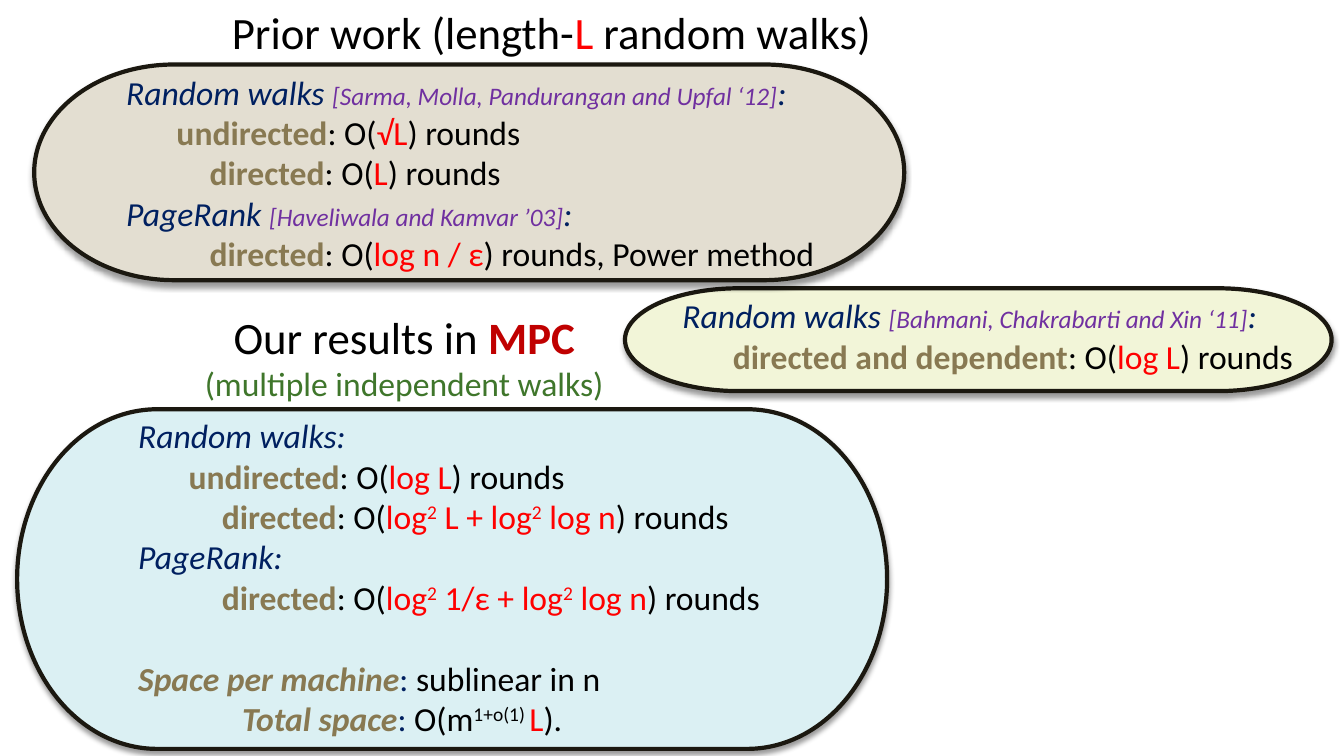
"""Build a slide comparing prior random-walk bounds with new MPC results."""
from lxml import etree
from pptx import Presentation
from pptx.dml.color import RGBColor
from pptx.enum.shapes import MSO_SHAPE
from pptx.enum.text import MSO_ANCHOR, MSO_AUTO_SIZE, PP_ALIGN
from pptx.oxml import parse_xml
from pptx.oxml.ns import qn
from pptx.util import Inches, Pt

TERMINATOR = MSO_SHAPE.FLOWCHART_TERMINATOR
TOP, NO_FIT = MSO_ANCHOR.TOP, MSO_AUTO_SIZE.NONE
LEFT, CENTER = PP_ALIGN.LEFT, PP_ALIGN.CENTER
DRAWING_NS = "http://schemas.openxmlformats.org/drawingml/2006/main"

COLORS = {
    "black": "000000", "red": "FF0000", "navy": "002060", "purple": "7030A0",
    "olive": "887952", "crimson": "C00000", "green": "3F762B", "outline": "1B1810",
    "sand": "E3DED1", "aqua": "DBF0F3", "lime": "F2F5D8",
}
STYLES = {
    "plain": ("black", {}),
    "power": ("black", {"baseline": 30000}),
    "bound": ("red", {}),
    "bound power": ("red", {"baseline": 30000}),
    "topic": ("navy", {"italic": True}),
    "colon": ("navy", {}),
    "citation": ("purple", {"italic": True, "size": Pt(18)}),
    "case": ("olive", {"bold": True}),
    "measure": ("olive", {"bold": True, "italic": True}),
    "heading": ("black", {"size": Pt(32)}),
    "heading bound": ("red", {"size": Pt(32)}),
    "model": ("crimson", {"size": Pt(32), "bold": True}),
    "remark": ("green", {}),
}
UNDIRECTED, DIRECTED, TOTAL = 3.75, 6.22, 7.73
LINE_GAP = 29


def topic(name, citation=None):
    if citation is None:
        return 0, 0, [("topic", f"{name}:")]
    return 0, 0, [("topic", f"{name} "), ("citation", citation), ("topic", ":")]


def case(name, indent, *bound, ending=") rounds"):
    return indent, 0, [("case", name), ("plain", ": O("), *bound, ("plain", ending)]


def squared_logs(argument):
    return [("bound", "log"), ("bound power", "2"), ("bound", f" {argument} + log"),
            ("bound power", "2"), ("bound", " log n")]


class ResultsSlide:
    """Hold the style and the slide; lengths are percentages of its size."""

    def __init__(self, deck):
        self.width, self.height = deck.slide_width, deck.slide_height
        self.slide = deck.slides.add_slide(deck.slide_layouts[4])
        self.font = "Calibri"
        self.size = Pt(24)

    def across(self, share):
        return int(self.width * share / 100)

    def down(self, share):
        return int(self.height * share / 100)

    def box(self, left, top, width, height):
        return self.across(left), self.down(top), self.across(width), self.down(height)

    def panel(self, place, color):
        panel = self.slide.shapes.add_shape(TERMINATOR, *self.box(*place))
        panel.fill.solid()
        panel.fill.fore_color.rgb = RGBColor.from_string(COLORS[color])
        panel.line.color.rgb = RGBColor.from_string(COLORS["outline"])
        panel.line.width = Pt(3)
        panel.shadow.inherit = False
        effects = panel.element.spPr.find(qn("a:effectLst"))
        effects.append(parse_xml(
            f'<a:outerShdw xmlns:a="{DRAWING_NS}" blurRad="{Pt(4)}" dist="{Pt(3)}" '
            'dir="5400000" rotWithShape="0"><a:srgbClr val="000000">'
            '<a:alpha val="40000"/></a:srgbClr></a:outerShdw>'))
        panel.element.getparent().insert(2, panel.element)

    def text(self, index, place, lines, align=LEFT):
        holder = self.slide.placeholders[index]
        holder.left, holder.top, holder.width, holder.height = self.box(*place)
        frame = holder.text_frame
        layout = {"word_wrap": True, "auto_size": NO_FIT, "vertical_anchor": TOP,
                  "margin_left": Inches(0.1), "margin_right": Inches(0.1),
                  "margin_top": Inches(0.05), "margin_bottom": Inches(0.05)}
        for name, value in layout.items():
            setattr(frame, name, value)
        for number, (indent, gap, pieces) in enumerate(lines):
            line = frame.add_paragraph() if number else frame.paragraphs[0]
            properties = line._p.get_or_add_pPr()
            properties.set("marL", str(self.across(indent)))
            properties.set("indent", "0")
            etree.SubElement(properties, qn("a:buNone"))
            spacing = {"alignment": align, "line_spacing": 1.0,
                       "space_before": Pt(gap), "space_after": Pt(0)}
            for name, value in spacing.items():
                setattr(line, name, value)
            for style, words in pieces:
                self.run(line, style, words)

    def run(self, line, style, words):
        color, changes = STYLES[style]
        run = line.add_run()
        run.text = words
        formats = {"name": self.font, "size": self.size, "bold": False,
                   "italic": False, **changes}
        baseline = formats.pop("baseline", None)
        for name, value in formats.items():
            setattr(run.font, name, value)
        run.font.color.rgb = RGBColor.from_string(COLORS[color])
        if baseline:
            run._r.get_or_add_rPr().set("baseline", str(baseline))


def main():
    deck = Presentation()
    deck.slide_width, deck.slide_height = Inches(13.33), Inches(7.5)
    results = ResultsSlide(deck)

    results.panel((2.55, 8.53, 64.73, 28.53), "sand")
    results.panel((46.5, 38.13, 52.58, 13.6), "lime")
    results.panel((1.28, 54.13, 64.73, 44.93), "aqua")

    results.text(0, (16.5, 0, 49.5, 8.53), [
        (0, 0, [("heading", "Prior work (length-"), ("heading bound", "L"),
                ("heading", " random walks)")]),
    ])
    results.text(2, (8.63, 8.8, 53.93, 28.27), [
        topic("Random walks", "[Sarma, Molla, Pandurangan and Upfal ‘12]"),
        case("undirected", UNDIRECTED, ("bound", "√L")),
        case("directed", DIRECTED, ("bound", "L")),
        topic("PageRank", "[Haveliwala and Kamvar ’03]"),
        case("directed", DIRECTED, ("bound", "log n / ε"),
             ending=") rounds, Power method"),
    ])
    results.text(1, (14.33, 40.27, 31.5, 13.87), [
        (0, 0, [("heading", "Our results in "), ("model", "MPC")]),
        (0, 0, [("remark", "(multiple independent walks)")]),
    ], CENTER)
    results.text(3, (50.03, 38.4, 47.55, 12.13), [
        topic("Random walks", "[Bahmani, Chakrabarti and Xin ‘11]"),
        case("directed and dependent", UNDIRECTED, ("bound", "log L")),
    ])
    results.text(4, (9.53, 54.27, 53.93, 44.4), [
        topic("Random walks"),
        case("undirected", UNDIRECTED, ("bound", "log L")),
        case("directed", DIRECTED, *squared_logs("L")),
        topic("PageRank"),
        case("directed", DIRECTED, *squared_logs("1/ε")),
        (0, LINE_GAP, [("measure", "Space per machine"), ("colon", ": "),
                       ("plain", "sublinear in n")]),
        (TOTAL, 0, [("measure", "Total space"), ("colon", ": "), ("plain", "O(m"),
                    ("power", "1+o(1) "), ("bound", "L"), ("plain", ").")]),
    ])
    deck.save("out.pptx")


if __name__ == "__main__":
    main()
